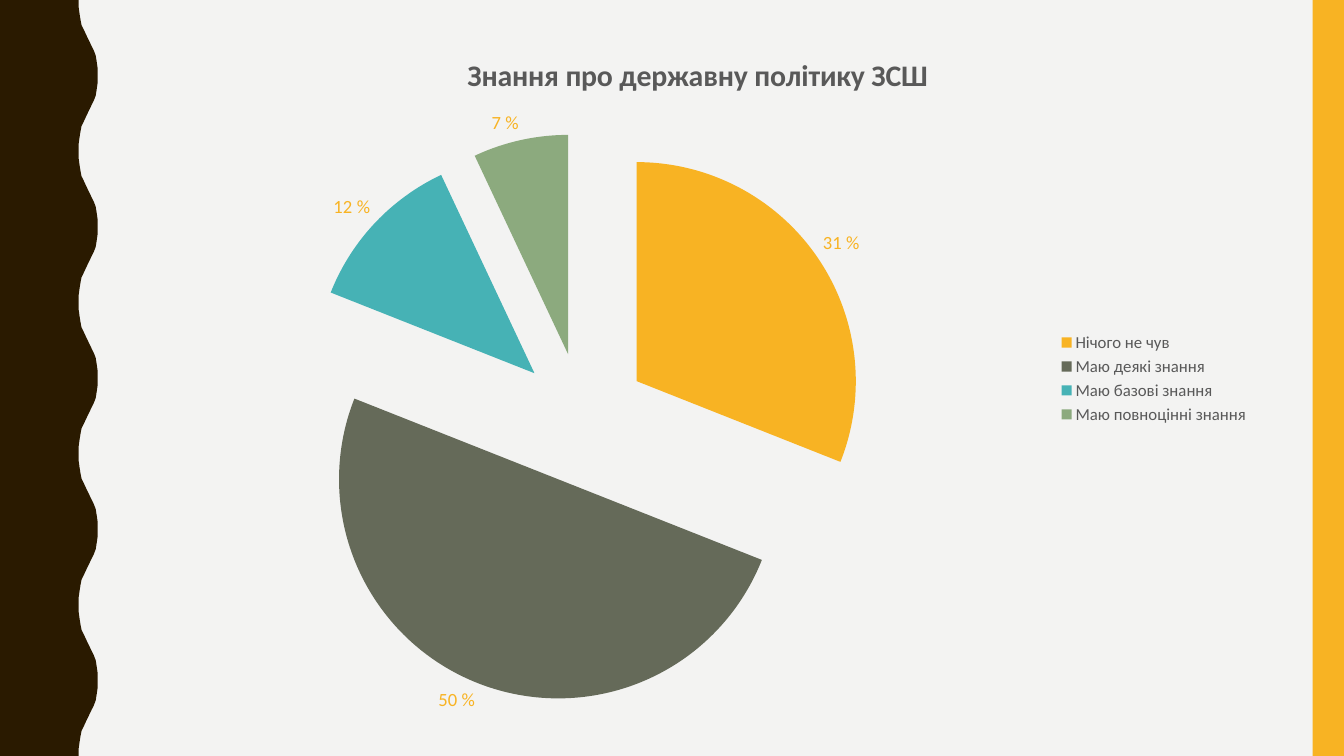
from dataclasses import dataclass

from lxml.etree import SubElement
from pptx import Presentation
from pptx.chart.data import CategoryChartData
from pptx.dml.color import RGBColor
from pptx.enum.chart import XL_CHART_TYPE as ChartType
from pptx.enum.chart import XL_LABEL_POSITION as LabelPosition
from pptx.enum.chart import XL_LEGEND_POSITION as LegendPosition
from pptx.enum.shapes import MSO_SHAPE as Shape
from pptx.oxml import parse_xml
from pptx.oxml.ns import nsdecls, qn
from pptx.util import Pt

TITLE = "Знання про державну політику ЗСШ"
ANSWERS = [
    ("Нічого не чув", 31, "F8B323"),
    ("Маю деякі знання", 50, "656A59"),
    ("Маю базові знання", 12, "46B2B5"),
    ("Маю повноцінні знання", 7, "8CAA7E"),
]
EXPLOSION = 30

SLIDE_WIDTH, SLIDE_HEIGHT = 960, 540
BAR_WIDTH = 22.4
CHART_BOX = (89.3, 14.4, 810.7, 511.9)
PLOT_LAYOUT = {"x": 0.152, "y": 0.158, "w": 0.502, "h": 0.795}
TITLE_LAYOUT = {"x": 0.297, "y": 0.04}

# Trough to crest of the wavy edge: (x, y) in points
HALF_WAVE = [
    (56.2, 0), (56.2, 5), (56.9, 10), (57.6, 14.4), (58.3, 18), (59.8, 21),
    (61.2, 24), (62.6, 27), (64.1, 30), (65.5, 33), (67, 36), (68.4, 39.6),
    (69.1, 44), (69.8, 49), (69.8, 54),
]
HALF_HEIGHT = 54


@dataclass(frozen=True)
class Theme:
    font: str = "Calibri"
    background: str = "F3F3F2"
    wave: str = "2A1A00"
    accent: str = "F8B323"
    text: str = "595959"
    title_size: float = 21.3
    label_size: float = 13.3
    legend_size: float = 12


THEME = Theme()


def paint(fill, color):
    fill.solid()
    fill.fore_color.rgb = RGBColor.from_string(color)


def style_font(font, size, color, bold=False):
    font.name = THEME.font
    font.size = Pt(size)
    font.bold = bold
    font.color.rgb = RGBColor.from_string(color)


def finish_shape(shape, color):
    shape.shadow.inherit = False
    shape.line.fill.background()
    paint(shape.fill, color)


def add_wave(slide):
    down = [(x, HALF_HEIGHT - y) for x, y in reversed(HALF_WAVE)]
    edge = []
    for half in range(SLIDE_HEIGHT // HALF_HEIGHT):
        profile = down if half % 2 else HALF_WAVE
        edge += [(x, y + half * HALF_HEIGHT) for x, y in profile]
    outline = edge + [(0, SLIDE_HEIGHT)]
    builder = slide.shapes.build_freeform(0, 0)
    builder.add_line_segments([(Pt(x), Pt(y)) for x, y in outline], close=True)
    finish_shape(builder.convert_to_shape(), THEME.wave)


def add_bar(slide):
    bar = slide.shapes.add_shape(
        Shape.RECTANGLE, Pt(SLIDE_WIDTH - BAR_WIDTH), 0, Pt(BAR_WIDTH), Pt(SLIDE_HEIGHT))
    finish_shape(bar, THEME.accent)


def set_layout(element, index, fractions, inner=False):
    """Place a chart part by fractions of the chart's width and height."""
    for old in element.findall(qn("c:layout")):
        element.remove(old)
    layout = parse_xml(f"<c:layout {nsdecls('c')}/>")
    manual = SubElement(layout, qn("c:manualLayout"))
    settings = [("layoutTarget", "inner")] if inner else []
    settings += [(f"{key}Mode", "edge") for key in ("x", "y")]
    settings += fractions.items()
    for tag, value in settings:
        SubElement(manual, qn(f"c:{tag}")).set("val", str(value))
    element.insert(index, layout)


def add_pie(slide):
    data = CategoryChartData()
    data.categories = [answer for answer, _, _ in ANSWERS]
    data.add_series(TITLE, [share for _, share, _ in ANSWERS])
    chart = slide.shapes.add_chart(ChartType.PIE, *map(Pt, CHART_BOX), data).chart
    chart.font.name = THEME.font

    chart.has_title = True
    title = chart.chart_title
    title.text_frame.text = TITLE
    style_font(title.text_frame.paragraphs[0].runs[0].font,
               THEME.title_size, THEME.text, bold=True)
    title.include_in_layout = False
    set_layout(title._element, 1, TITLE_LAYOUT)

    chart.has_legend = True
    chart.legend.position = LegendPosition.RIGHT
    chart.legend.include_in_layout = False
    style_font(chart.legend.font, THEME.legend_size, THEME.text)

    plot = chart.plots[0]
    plot.vary_by_categories = True
    series = plot.series[0]
    for index, (_, _, color) in enumerate(ANSWERS):
        paint(series.points[index].format.fill, color)
    explosion = parse_xml(f'<c:explosion {nsdecls("c")} val="{EXPLOSION}"/>')
    series._element.find(qn("c:dPt")).addprevious(explosion)

    labels = series.data_labels
    labels.show_value = True
    labels.number_format = '0" %"'
    labels.number_format_is_linked = False
    labels.position = LabelPosition.OUTSIDE_END
    style_font(labels.font, THEME.label_size, THEME.accent)
    plot_area = chart._chartSpace.find(f".//{qn('c:plotArea')}")
    set_layout(plot_area, 0, PLOT_LAYOUT, inner=True)


def main():
    presentation = Presentation()
    presentation.slide_width = Pt(SLIDE_WIDTH)
    presentation.slide_height = Pt(SLIDE_HEIGHT)
    slide = presentation.slides.add_slide(presentation.slide_layouts.get_by_name("Blank"))
    paint(slide.background.fill, THEME.background)
    add_wave(slide)
    add_bar(slide)
    add_pie(slide)
    presentation.save("out.pptx")


if __name__ == "__main__":
    main()
